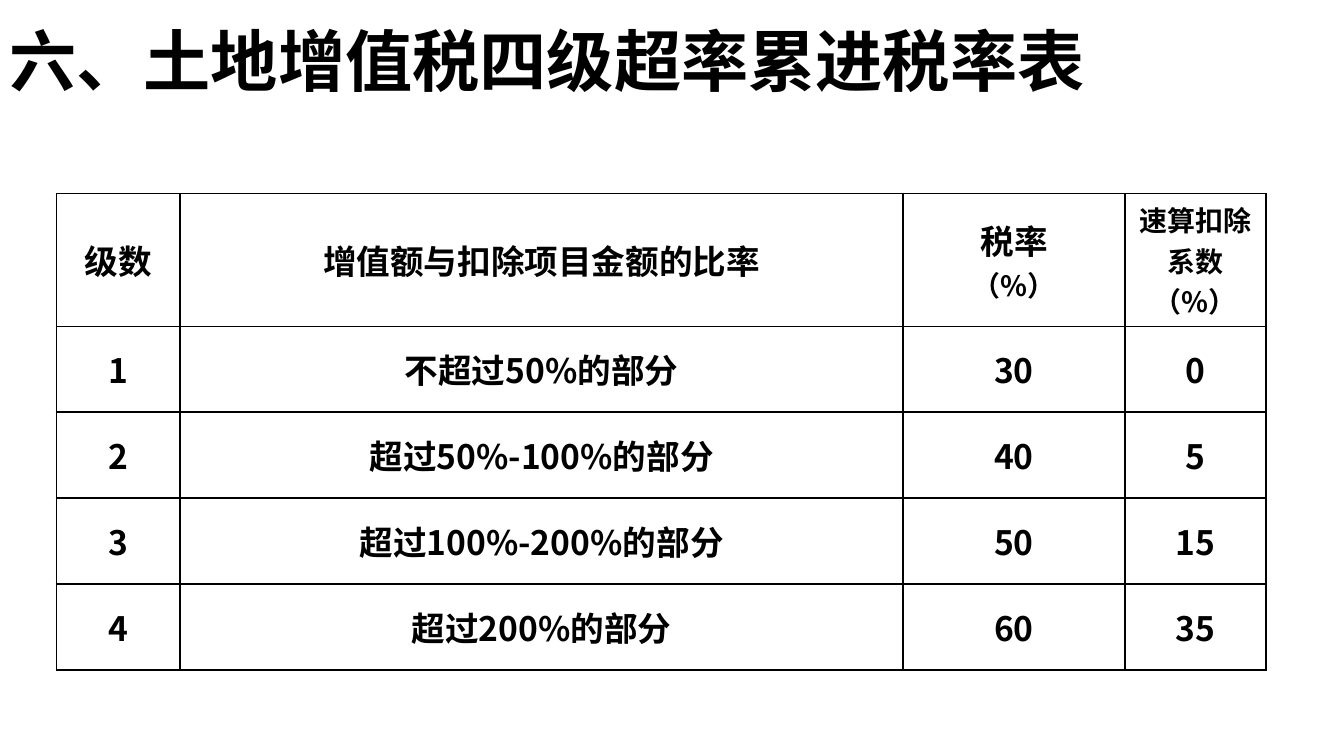
from pptx import Presentation
from pptx.dml.color import RGBColor as RGB
from pptx.enum.text import MSO_ANCHOR as Anchor, MSO_AUTO_SIZE as Fit, PP_ALIGN as Align
from pptx.oxml import parse_xml
from pptx.oxml.ns import nsdecls
from pptx.util import Pt

BLACK = RGB(0, 0, 0)
WHITE = RGB(255, 255, 255)
FACE = "Noto Sans CJK SC"
TITLE = "六、土地增值税四级超率累进税率表"
HEAD = [
    [("级数", 18)],
    [("增值额与扣除项目金额的比率", 18)],
    [("税率", 18), ("（%）", 15)],
    [("速算扣除系数（%）", 15)],
]
RATES = [
    ("1", "不超过50%的部分", "30", "0"),
    ("2", "超过50%-100%的部分", "40", "5"),
    ("3", "超过100%-200%的部分", "50", "15"),
    ("4", "超过200%的部分", "60", "35"),
]
COLS = (66.24, 387.36, 118.8, 75.6)
ROWS = (70.56,) + (46.08,) * len(RATES)


def apply(item, **vals):
    """Set each given attribute on the item."""
    for key, val in vals.items():
        setattr(item, key, val)


def add_run(para, text, size, bold=True):
    """Add a run in the slide's typeface."""
    run = para.add_run()
    run.text = text
    apply(run.font, name=FACE, size=Pt(size), bold=bold)
    run.font.color.rgb = BLACK
    run.font._element.append(parse_xml(f'<a:ea {nsdecls("a")} typeface="{FACE}"/>'))


def add_title(slide, left, top, width, height):
    """Place the title placeholder in the box."""
    title = slide.shapes.title
    apply(title, left=Pt(left), top=Pt(top), width=Pt(width), height=Pt(height))
    frame = title.text_frame
    apply(frame, auto_size=Fit.NONE, word_wrap=True, vertical_anchor=Anchor.MIDDLE,
          margin_left=Pt(5), margin_right=Pt(5), margin_top=Pt(3), margin_bottom=Pt(3))
    para = frame.paragraphs[0]
    apply(para, alignment=Align.LEFT, line_spacing=0.9)
    add_run(para, TITLE, 36)
    add_run(para, " ", 48, False)


def fill_cell(cell, lines):
    """Write centred lines in a white cell with black borders."""
    apply(cell, vertical_anchor=Anchor.MIDDLE, margin_left=Pt(7.2), margin_right=Pt(7.2),
          margin_top=Pt(3), margin_bottom=Pt(3))
    props = cell._tc.get_or_add_tcPr()
    for side in "LRTB":
        props.append(parse_xml(
            f'<a:ln{side} {nsdecls("a")} w="{Pt(1)}"><a:solidFill>'
            f'<a:srgbClr val="{BLACK}"/></a:solidFill></a:ln{side}>'))
    cell.fill.solid()
    cell.fill.fore_color.rgb = WHITE
    frame = cell.text_frame
    for i, (text, size) in enumerate(lines):
        para = frame.add_paragraph() if i else frame.paragraphs[0]
        para.alignment = Align.CENTER
        add_run(para, text, size)


def add_rates(slide, left, top, width, height):
    """Place the tax rate table in the box."""
    table = slide.shapes.add_table(len(ROWS), len(COLS), Pt(left), Pt(top),
                                   Pt(width), Pt(height)).table
    for col, size in zip(table.columns, COLS):
        col.width = Pt(size)
    for row, size in zip(table.rows, ROWS):
        row.height = Pt(size)
    body = [[[(text, 18)] for text in row] for row in RATES]
    for row, cells in zip(table.rows, [HEAD] + body):
        for cell, lines in zip(row.cells, cells):
            fill_cell(cell, lines)


def main():
    """Build and save the slide."""
    deck = Presentation()
    apply(deck, slide_width=Pt(720), slide_height=Pt(405))
    slide = deck.slides.add_slide(deck.slide_layouts[5])
    add_title(slide, 0, 7.2, 684, 46.8)
    add_rates(slide, 30.24, 103.68, sum(COLS), sum(ROWS))
    deck.save("out.pptx")


if __name__ == "__main__":
    main()
